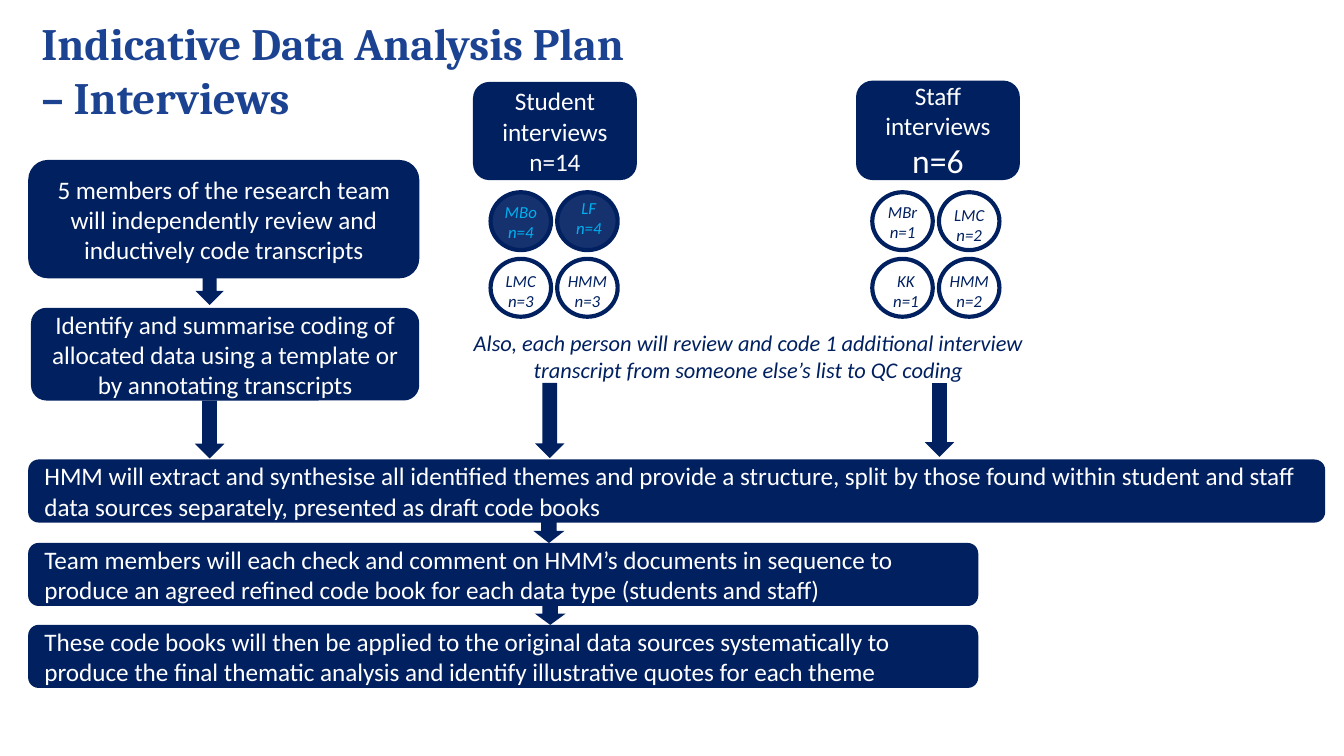
from pptx import Presentation
from pptx.dml.color import RGBColor
from pptx.enum.shapes import MSO_SHAPE as Shape
from pptx.enum.text import MSO_ANCHOR as Anchor, PP_ALIGN as Align
from pptx.util import Pt

COLORS = {"navy": "002060", "shade": "15326E", "cyan": "00B0F0",
          "title": "1C4392", "white": "FFFFFF"}

TITLE = "Indicative Data Analysis Plan – Interviews"
NOTE = ("Also, each person will review and code 1 additional interview "
        "transcript from someone else’s list to QC coding")

# Text, left, top, width, height
STEPS = [
    ("5 members of the research team will independently review and "
     "inductively code transcripts", 15.1, 85.7, 209.5, 63.4),
    ("Identify and summarise coding of allocated data using a template or "
     "by annotating transcripts", 16.6, 164.9, 208, 49.7),
]
SOURCES = [
    ("Student interviews n=14", 253.4, 43.9, 87.8, 52.6),
    ("Staff interviews\nn=6", 458.6, 43.2, 87.8, 53.3),
]
# Text, top, width
BARS = [
    ("HMM will extract and synthesise all identified themes and provide a "
     "structure, split by those found within student and staff data sources "
     "separately, presented as draft code books", 246.2, 694.8),
    ("Team members will each check and comment on HMM’s documents in sequence "
     "to produce an agreed refined code book for each data type "
     "(students and staff)", 290.9, 509),
    ("These code books will then be applied to the original data sources "
     "systematically to produce the final thematic analysis and identify "
     "illustrative quotes for each theme", 334.8, 509),
]
BAR_LEFT, BAR_HEIGHT = 15.1, 33.8

# Center, top, width, height
ARROWS = [
    (112.3, 144, 15.1, 19.4), (112.3, 214.6, 15.8, 31),
    (294.5, 205.2, 15.8, 40.3), (503.3, 205.2, 15.8, 39.6),
    (294.1, 277.9, 16.6, 13), (294.8, 322.6, 16.6, 12.2),
]

# Left of each group, then reviewers row by row:
# name, count, label shift right, label drop, shaded
REVIEWERS = [
    (262.8, [("MBo", 4, 0, 1.4, True), ("LF", 4, 0.7, -0.7, True),
             ("LMC", 3, 0, 2.9, False), ("HMM", 3, 0, 2.9, False)]),
    (467.3, [("MBr", 1, 0, 1.4, False), ("LMC", 2, 0, 2.9, False),
             ("KK", 1, 1.8, 2.9, False), ("HMM", 2, 0, 2.9, False)]),
]
CIRCLE_WIDTH, CIRCLE_HEIGHT = 32.4, 31
CIRCLE_TOP, CIRCLE_PITCH = 103, 35.7
LABEL_WIDTH, LABEL_HEIGHT = 40, 28.8


def color(name):
    return RGBColor.from_string(COLORS[name])


def write(shape, text, size, ink, align=Align.CENTER, font="Calibri",
          bold=False, italic=False):
    frame = shape.text_frame
    frame.word_wrap = True
    frame.text = text
    for paragraph in frame.paragraphs:
        paragraph.alignment = align
        for run in paragraph.runs:
            run.font.name, run.font.size = font, Pt(size)
            run.font.bold, run.font.italic = bold, italic
            run.font.color.rgb = color(ink)


def add_filled(shapes, kind, left, top, width, height, fill="navy"):
    shape = shapes.add_shape(kind, Pt(left), Pt(top), Pt(width), Pt(height))
    shape.shadow.inherit = False
    shape.fill.solid()
    shape.fill.fore_color.rgb = color(fill)
    shape.line.fill.background()
    return shape


def add_box(shapes, text, left, top, width, height, align=Align.CENTER):
    box = add_filled(shapes, Shape.ROUNDED_RECTANGLE, left, top, width, height)
    write(box, text, 13.5, "white", align)
    box.text_frame.vertical_anchor = Anchor.MIDDLE
    return box


def add_text(shapes, text, left, top, width, height, size, ink, **style):
    box = shapes.add_textbox(Pt(left), Pt(top), Pt(width), Pt(height))
    write(box, text, size, ink, **style)


def add_reviewer(shapes, left, top, name, count, shift, drop, shaded):
    group = shapes.add_group_shape().shapes
    circle = add_filled(group, Shape.OVAL, left, top, CIRCLE_WIDTH,
                        CIRCLE_HEIGHT, "shade" if shaded else "white")
    circle.line.color.rgb = color("navy")
    circle.line.width = Pt(2.25)
    label_left = left + (CIRCLE_WIDTH - LABEL_WIDTH) / 2 + shift
    add_text(group, f"{name}\nn={count}", label_left, top + drop, LABEL_WIDTH,
             LABEL_HEIGHT, 9, "cyan" if shaded else "navy", italic=True)


def main():
    presentation = Presentation()
    presentation.slide_width, presentation.slide_height = Pt(720), Pt(405)
    slide = presentation.slides.add_slide(presentation.slide_layouts[6])
    shapes = slide.shapes

    for step in STEPS:
        add_box(shapes, *step)

    for source in SOURCES:
        box = add_box(shapes, *source)
        frame = box.text_frame
        frame.margin_left = frame.margin_right = Pt(5)
        frame.margin_top = frame.margin_bottom = Pt(3)
    staff_count = frame.paragraphs[-1].runs[0]
    staff_count.font.size = Pt(18)

    for group_left, reviewers in REVIEWERS:
        for index, reviewer in enumerate(reviewers):
            row, column = divmod(index, 2)
            add_reviewer(shapes, group_left + column * CIRCLE_PITCH,
                         CIRCLE_TOP + row * CIRCLE_PITCH, *reviewer)

    add_text(shapes, NOTE, 230.4, 172.8, 341.3, 36, 12, "navy", italic=True)

    for text, top, width in BARS:
        add_box(shapes, text, BAR_LEFT, top, width, BAR_HEIGHT, Align.LEFT)

    for center, top, width, height in ARROWS:
        add_filled(shapes, Shape.DOWN_ARROW, center - width / 2, top, width,
                   height)

    add_text(shapes, TITLE, 15.1, 5, 341.3, 65.5, 24, "title",
             align=Align.LEFT, font="Cambria", bold=True)
    presentation.save("out.pptx")


if __name__ == "__main__":
    main()
